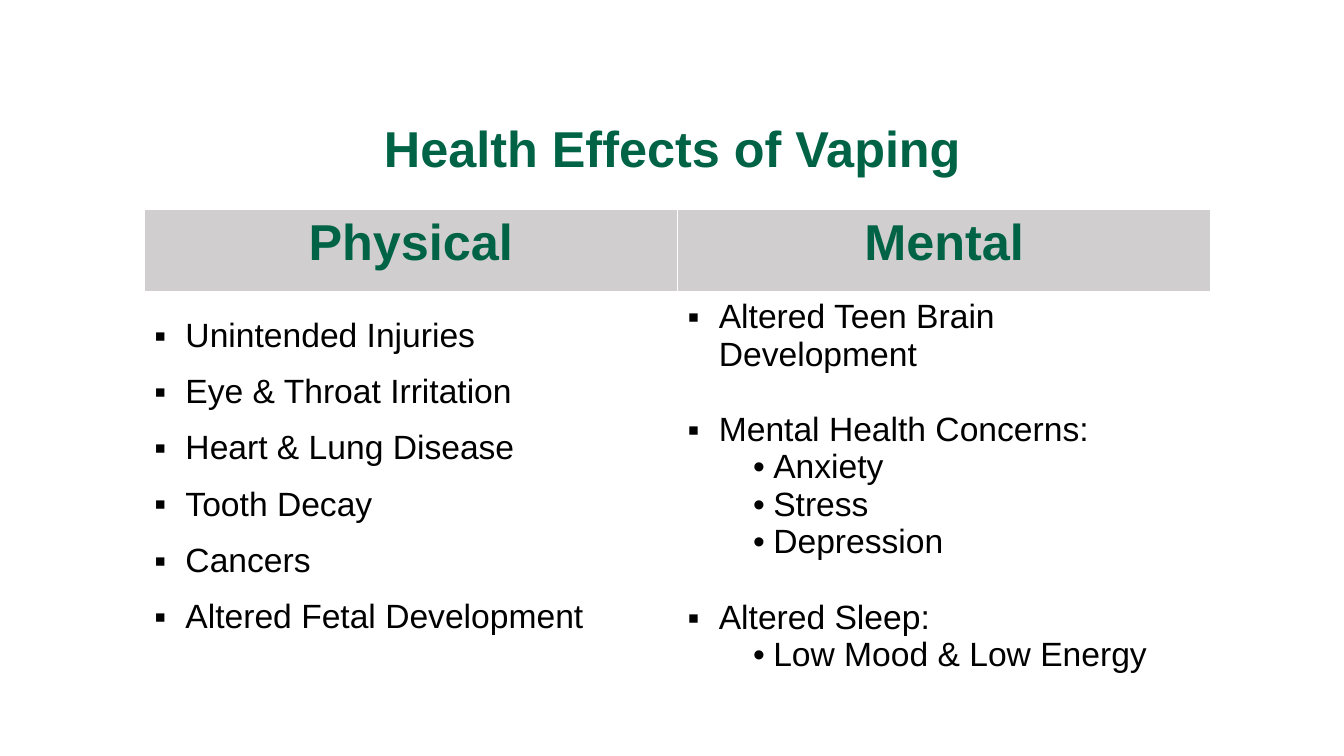
from pptx import Presentation
from pptx.dml.color import RGBColor
from pptx.enum.text import MSO_ANCHOR, PP_ALIGN
from pptx.oxml.ns import qn
from pptx.util import Inches, Pt
from lxml import etree

CENTER, LEFT = PP_ALIGN.CENTER, PP_ALIGN.LEFT
MIDDLE, TOP = MSO_ANCHOR.MIDDLE, MSO_ANCHOR.TOP
COLORS = {"green": "006345", "gray": "D0CECE", "black": "000000", "white": "FFFFFF"}
HEADING = {"size": Pt(36), "bold": True, "name": "Arial"}
BODY = {"size": Pt(24), "bold": False, "name": "Arial"}

# Bullet character, left margin and hanging indent in inches
ITEM = ("▪", 0.31, 0.31)
SUBITEM = ("•", 0.85, 0.2)

HEADERS = ["Physical", "Mental"]
# Text, bullet style, points before
PHYSICAL = [(text, ITEM, 0) for text in (
    "Unintended Injuries", "Eye & Throat Irritation", "Heart & Lung Disease",
    "Tooth Decay", "Cancers", "Altered Fetal Development")]
MENTAL = [
    ("Altered Teen Brain Development", ITEM, 0),
    ("Mental Health Concerns:", ITEM, 27),
    ("Anxiety", SUBITEM, 0),
    ("Stress", SUBITEM, 0),
    ("Depression", SUBITEM, 0),
    ("Altered Sleep:", ITEM, 27),
    ("Low Mood & Low Energy", SUBITEM, 0),
]


class SlideBuilder:
    def __init__(self, presentation):
        self.slide = presentation.slides.add_slide(presentation.slide_layouts[6])

    def style(self, paragraph, text, values, color, align=LEFT):
        paragraph.alignment = align
        run = paragraph.add_run()
        run.text = text
        for name, value in values.items():
            setattr(run.font, name, value)
        run.font.color.rgb = RGBColor.from_string(COLORS[color])

    def title(self, text, left, top, width, height):
        shape = self.slide.shapes.add_textbox(
            Inches(left), Inches(top), Inches(width), Inches(height))
        frame = shape.text_frame
        frame.word_wrap = True
        frame.vertical_anchor = MIDDLE
        paragraph = frame.paragraphs[0]
        paragraph.line_spacing = 0.9
        self.style(paragraph, text, HEADING, "green", CENTER)

    def table(self, left, top, column_widths, row_heights):
        shape = self.slide.shapes.add_table(
            len(row_heights), len(column_widths), Inches(left), Inches(top),
            Inches(sum(column_widths)), Inches(sum(row_heights)))
        table = shape.table
        table.first_row = table.horz_banding = False
        for column, width in zip(table.columns, column_widths):
            column.width = Inches(width)
        for row, height in zip(table.rows, row_heights):
            row.height = Inches(height)
        return table

    def borders(self, cell, bottom):
        properties = cell._tc.get_or_add_tcPr()
        for side, points in (("L", 1), ("R", 1), ("T", 1), ("B", bottom)):
            line = etree.SubElement(properties, qn("a:ln" + side), w=str(Pt(points)))
            fill = etree.SubElement(line, qn("a:solidFill"))
            etree.SubElement(fill, qn("a:srgbClr"), val=COLORS["white"])

    def header_cell(self, cell, text):
        self.borders(cell, 3)
        cell.fill.solid()
        cell.fill.fore_color.rgb = RGBColor.from_string(COLORS["gray"])
        self.style(cell.text_frame.paragraphs[0], text, HEADING, "green", CENTER)

    def list_cell(self, cell, items, line_spacing):
        self.borders(cell, 1)
        cell.fill.background()
        cell.vertical_anchor = TOP
        frame = cell.text_frame
        for index, (text, bullet, before) in enumerate(items):
            paragraph = frame.add_paragraph() if index else frame.paragraphs[0]
            paragraph.line_spacing = line_spacing
            if before:
                paragraph.space_before = Pt(before)
            self.bullet(paragraph, *bullet)
            self.style(paragraph, text, BODY, "black")

    def bullet(self, paragraph, character, margin, hanging):
        properties = paragraph._p.get_or_add_pPr()
        properties.set("marL", str(Inches(margin)))
        properties.set("indent", str(-Inches(hanging)))
        etree.SubElement(properties, qn("a:buFont"), typeface="Arial")
        etree.SubElement(properties, qn("a:buChar"), char=character)


def main():
    presentation = Presentation()
    presentation.slide_width = Inches(13.33)
    presentation.slide_height = Inches(7.5)
    builder = SlideBuilder(presentation)

    # Title
    builder.title("Health Effects of Vaping", 0.92, 1.02, 11.5, 0.96)

    # Table of effects
    table = builder.table(1.43, 2.08, [5.29, 5.29], [0.83, 4.38])
    for column, header in enumerate(HEADERS):
        builder.header_cell(table.cell(0, column), header)
    builder.list_cell(table.cell(1, 0), PHYSICAL, 1.5)
    builder.list_cell(table.cell(1, 1), MENTAL, 1.0)

    presentation.save("out.pptx")


if __name__ == "__main__":
    main()
